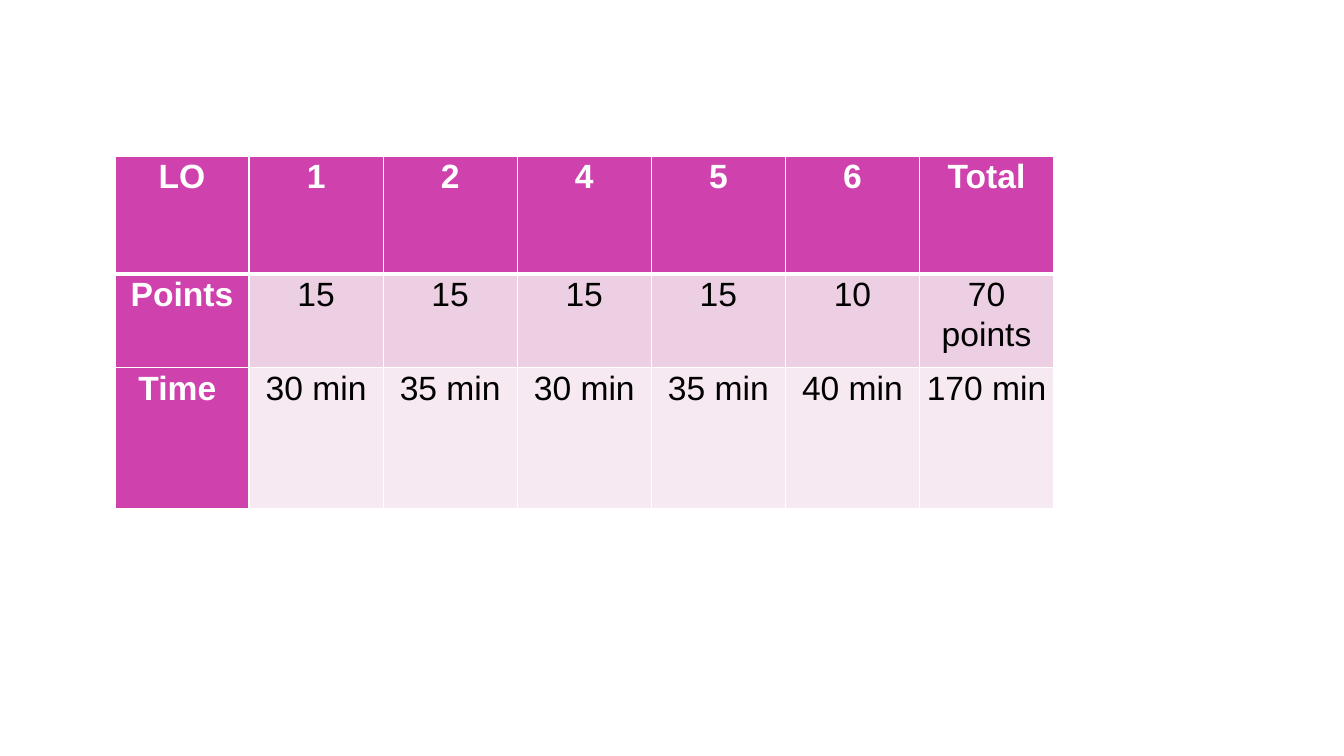
from lxml import etree
from pptx import Presentation
from pptx.dml.color import RGBColor
from pptx.enum import text
from pptx.oxml import ns
from pptx.util import Inches, Pt

ROWS = [
    ("LO", "1", "2", "4", "5", "6", "Total"),
    ("Points", "15", "15", "15", "15", "10", "70 points"),
    ("Time ", "30 min", "35 min", "30 min", "35 min", "40 min", "170 min"),
]
ROW_HEIGHTS = (1.17, 0.93, 1.4)
COLUMN_WIDTH = 1.33
LEFT, TOP = 1.14, 1.55

WHITE = RGBColor(0xFF, 0xFF, 0xFF)
BLACK = RGBColor(0, 0, 0)
MAGENTA = RGBColor(0xCF, 0x41, 0xAD)
PINK = RGBColor(0xED, 0xCF, 0xE3)
PALE_PINK = RGBColor(0xF6, 0xE9, 0xF1)
ROW_FILLS = (MAGENTA, PINK, PALE_PINK)

CELL_FORMAT = {
    "margin_left": Inches(0.07),
    "margin_right": Inches(0.07),
    "margin_top": 0,
    "margin_bottom": 0,
}
PARA_FORMAT = {
    "alignment": text.PP_ALIGN.CENTER,
    "line_spacing": 1.06,
    "space_after": Pt(8),
}


def apply_format(target, values):
    for name, value in values.items():
        setattr(target, name, value)


def add_borders(cell, widths):
    properties = cell._tc.get_or_add_tcPr()
    for side, width in widths.items():
        line = etree.SubElement(properties, ns.qn(f"a:ln{side}"), w=str(Pt(width)))
        fill = etree.SubElement(line, ns.qn("a:solidFill"))
        etree.SubElement(fill, ns.qn("a:srgbClr"), val=str(WHITE))


def fill_cell(cell, content, row, column):
    heading = row == 0 or column == 0
    apply_format(cell, CELL_FORMAT)
    add_borders(cell, {"L": 1, "R": 1, "T": 3 if row == 1 else 1, "B": 3 if row == 0 else 1})
    cell.fill.solid()
    cell.fill.fore_color.rgb = MAGENTA if heading else ROW_FILLS[row]
    para = cell.text_frame.paragraphs[0]
    apply_format(para, PARA_FORMAT)
    span = para.add_run()
    span.text = content
    apply_format(span.font, {"name": "Arial", "size": Pt(24), "bold": heading})
    span.font.color.rgb = WHITE if heading else BLACK


def main():
    deck = Presentation()
    deck.slide_width, deck.slide_height = Inches(13.33), Inches(7.5)
    page = deck.slides.add_slide(deck.slide_layouts[6])
    column_count = len(ROWS[0])
    table = page.shapes.add_table(
        len(ROWS), column_count, Inches(LEFT), Inches(TOP),
        Inches(COLUMN_WIDTH * column_count), Inches(sum(ROW_HEIGHTS)),
    ).table
    table.first_col = True
    for column in table.columns:
        column.width = Inches(COLUMN_WIDTH)
    for row, contents in enumerate(ROWS):
        table.rows[row].height = Inches(ROW_HEIGHTS[row])
        for column, content in enumerate(contents):
            fill_cell(table.cell(row, column), content, row, column)
    deck.save("out.pptx")


if __name__ == "__main__":
    main()
